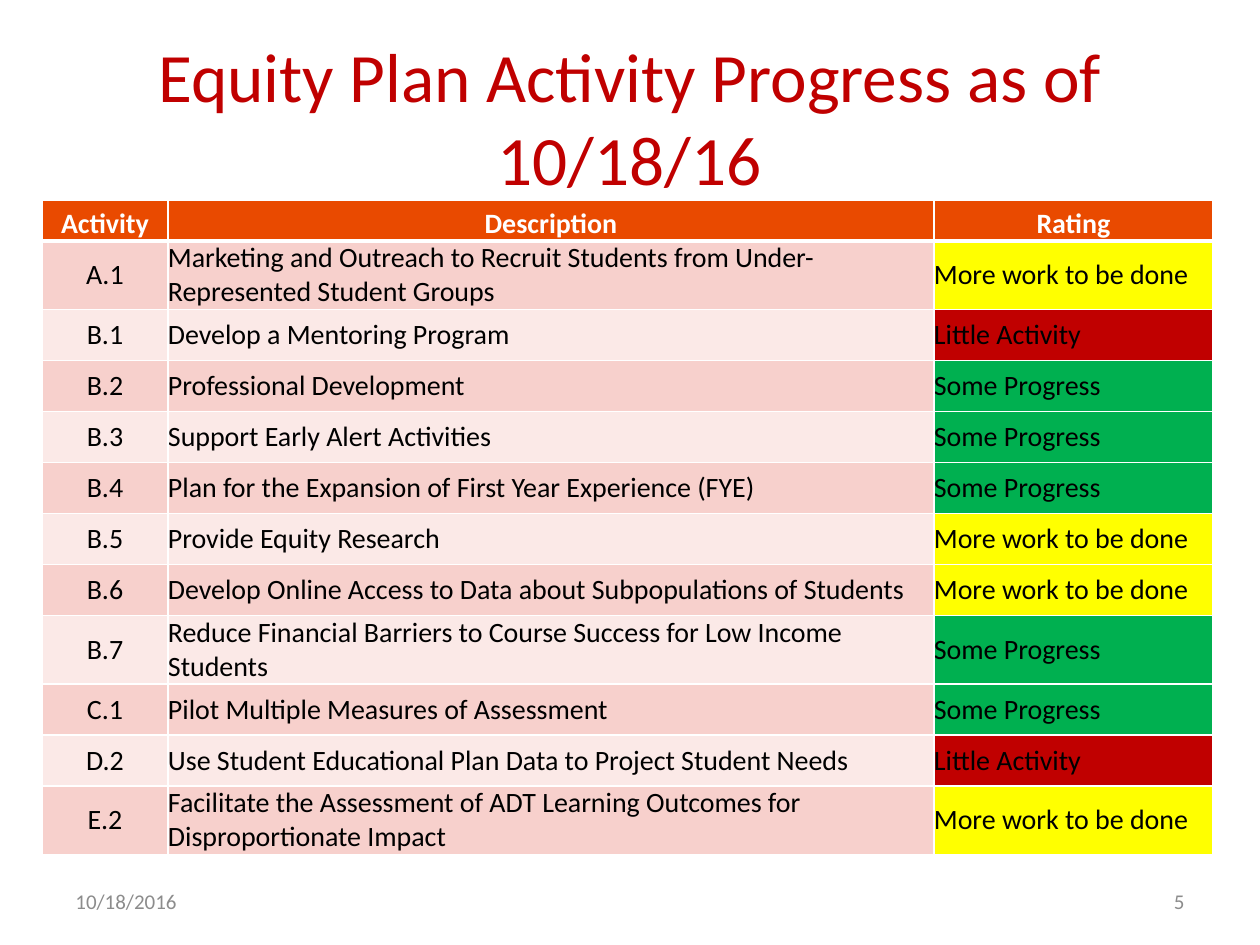
"""Build the equity plan progress slide: a title, a rating table and a footer."""
from lxml import etree
from pptx import Presentation
from pptx.dml.color import RGBColor
from pptx.enum.text import MSO_ANCHOR, MSO_AUTO_SIZE, PP_ALIGN
from pptx.oxml.ns import qn
from pptx.util import Pt

LEFT, CENTER, RIGHT = PP_ALIGN.LEFT, PP_ALIGN.CENTER, PP_ALIGN.RIGHT
MIDDLE, BOTTOM = MSO_ANCHOR.MIDDLE, MSO_ANCHOR.BOTTOM
FIXED = MSO_AUTO_SIZE.NONE

WHITE = RGBColor(0xFF, 0xFF, 0xFF)
BLACK = RGBColor(0x00, 0x00, 0x00)
GRAY = RGBColor(0x8C, 0x8C, 0x8C)
RED = RGBColor(0xC0, 0x00, 0x00)
GREEN = RGBColor(0x00, 0xB0, 0x50)
YELLOW = RGBColor(0xFF, 0xFF, 0x00)
ORANGE = RGBColor(0xE9, 0x4A, 0x00)
BANDS = (RGBColor(0xF7, 0xD0, 0xCC), RGBColor(0xFB, 0xE9, 0xE7))

TITLE = "Equity Plan Activity Progress as of 10/18/16"
HEADS = ("Activity", "Description", "Rating")
MORE, LITTLE, SOME = "More work to be done", "Little Activity", "Some Progress"
RATINGS = {MORE: YELLOW, LITTLE: RED, SOME: GREEN}
ROWS = [
    ("A.1", "Marketing and Outreach to Recruit Students from Under-Represented Student Groups", MORE),
    ("B.1", "Develop a Mentoring Program", LITTLE),
    ("B.2", "Professional Development", SOME),
    ("B.3", "Support Early Alert Activities", SOME),
    ("B.4", "Plan for the Expansion of First Year Experience (FYE)", SOME),
    ("B.5", "Provide Equity Research", MORE),
    ("B.6", "Develop Online Access to Data about Subpopulations of Students", MORE),
    ("B.7", "Reduce Financial Barriers to Course Success for Low Income Students", SOME),
    ("C.1", "Pilot Multiple Measures of Assessment", SOME),
    ("D.2", "Use Student Educational Plan Data to Project Student Needs", LITTLE),
    ("E.2", "Facilitate the Assessment of ADT Learning Outcomes for Disproportionate Impact", MORE),
]
FOOTER = [("10/18/2016", 63, LEFT), ("5", 903, RIGHT)]

PX = 914400 // 126
WIDTHS = (126, 766, 279)
HEAD_H, ROW_H = 41, 51


def box(*sides):
    return [side * PX for side in sides]


def style(frame, size, color, align, bold=False):
    para = frame.paragraphs[0]
    para.alignment = align
    font = para.runs[0].font
    font.name, font.size, font.bold = "Calibri", Pt(size), bold
    font.color.rgb = color


def edge(cell, low):
    props = cell._tc.get_or_add_tcPr()
    sides = (("lnL", 1), ("lnR", 1), ("lnT", 1), ("lnB", low))
    for spot, (tag, width) in enumerate(sides):
        line = etree.Element(qn(f"a:{tag}"), w=str(Pt(width)))
        fill = etree.SubElement(line, qn("a:solidFill"))
        etree.SubElement(fill, qn("a:srgbClr"), val=str(WHITE))
        props.insert(spot, line)


def fill_cell(cell, text, fill, color, align, anchor, head):
    cell.margin_left = cell.margin_right = cell.margin_top = cell.margin_bottom = 0
    cell.vertical_anchor = anchor
    cell.fill.solid()
    cell.fill.fore_color.rgb = fill
    cell.text_frame.text = text
    style(cell.text_frame, 16, color, align, head)
    edge(cell, 3 if head else 1)


def add_title(slide):
    title = slide.shapes.title
    title.left, title.top, title.width, title.height = box(63, 38, 1134, 157)
    frame = title.text_frame
    frame.text = TITLE
    frame.auto_size, frame.vertical_anchor = FIXED, MIDDLE
    style(frame, 39.6, RED, CENTER)


def add_grid(slide):
    high = HEAD_H + ROW_H * len(ROWS)
    place = box(42, 200, sum(WIDTHS), high)
    table = slide.shapes.add_table(len(ROWS) + 1, len(HEADS), *place).table
    for col, width in zip(table.columns, WIDTHS):
        col.width = width * PX
    for i, row in enumerate(table.rows):
        row.height = (ROW_H if i else HEAD_H) * PX
    for j, text in enumerate(HEADS):
        fill_cell(table.cell(0, j), text, ORANGE, WHITE, CENTER, BOTTOM, True)
    for i, row in enumerate(ROWS):
        for j, text in enumerate(row):
            fill = RATINGS.get(text, BANDS[i % 2])
            align = LEFT if j else CENTER
            fill_cell(table.cell(i + 1, j), text, fill, BLACK, align, MIDDLE, False)


def add_footer(slide):
    for text, left, align in FOOTER:
        frame = slide.shapes.add_textbox(*box(left, 876, 294, 50)).text_frame
        frame.word_wrap, frame.vertical_anchor = True, MIDDLE
        frame.text = text
        style(frame, 12, GRAY, align)


def main():
    deck = Presentation()
    deck.slide_width, deck.slide_height = box(1260, 945)
    slide = deck.slides.add_slide(deck.slide_layouts[5])
    add_title(slide)
    add_grid(slide)
    add_footer(slide)
    deck.save("out.pptx")


if __name__ == "__main__":
    main()
